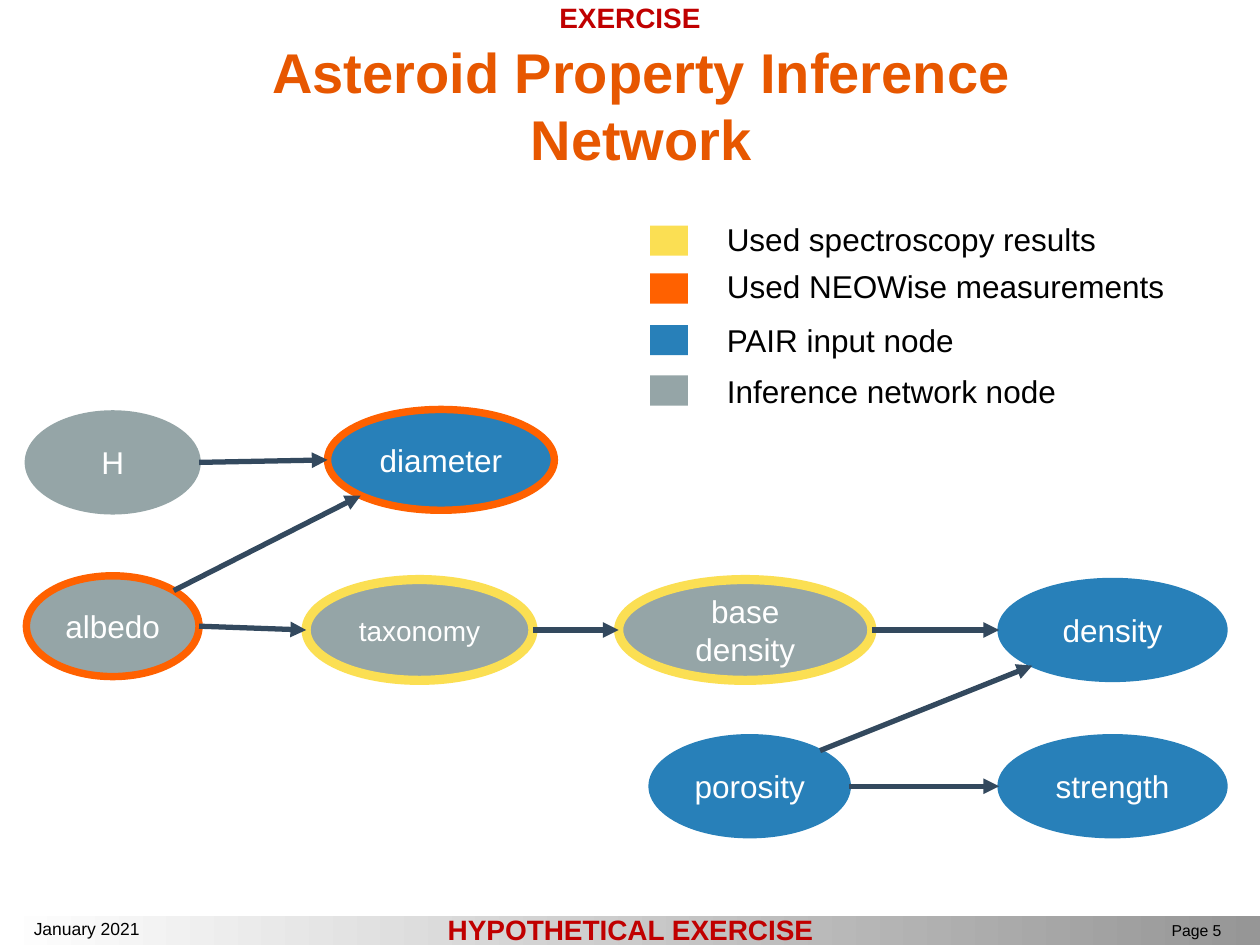
import math

import pptx
import pptx.util
from lxml import etree
from pptx.dml.color import RGBColor
from pptx.enum.shapes import MSO_CONNECTOR, MSO_SHAPE
from pptx.enum.text import MSO_ANCHOR, PP_ALIGN
from pptx.oxml.ns import qn
from pptx.util import Inches, Pt

WHITE = RGBColor(0xFF, 0xFF, 0xFF)
BLACK = RGBColor(0x00, 0x00, 0x00)
SILVER = RGBColor(0x96, 0x96, 0x96)
RED = RGBColor(0xC0, 0x00, 0x00)
TITLE = RGBColor(0xE7, 0x57, 0x00)
YELLOW = RGBColor(0xFB, 0xDF, 0x53)
ORANGE = RGBColor(0xFF, 0x61, 0x00)
BLUE = RGBColor(0x28, 0x80, 0xB9)
GRAY = RGBColor(0x95, 0xA5, 0xA7)
NAVY = RGBColor(0x33, 0x49, 0x5E)

prs = pptx.Presentation()
prs.slide_width, prs.slide_height = Inches(10), Inches(7.5)
s = prs.slides.add_slide(prs.slide_layouts[6])


def write(sp, text, size, color, bold=False, align=PP_ALIGN.LEFT,
          anchor=MSO_ANCHOR.TOP, wrap=True):
    tf = sp.text_frame
    tf.word_wrap = wrap
    tf.vertical_anchor = anchor
    p = tf.paragraphs[0]
    p.text = text
    p.alignment = align
    p.font.name = "Arial"
    p.font.size = Pt(size)
    p.font.bold = bold
    p.font.color.rgb = color
    return tf


def add_box(x, y, w, h, *args, **kwargs):
    sp = s.shapes.add_textbox(Inches(x), Inches(y), Inches(w), Inches(h))
    return write(sp, *args, **kwargs)


# Footer band
sp = s.shapes.add_shape(MSO_SHAPE.RECTANGLE, 0, Inches(7.27), Inches(10), Inches(0.23))
sp.shadow.inherit = False
sp.line.fill.background()
sp.fill.gradient()
sp.fill.gradient_angle = 0
for stop, color, position in zip(sp.fill.gradient_stops, (WHITE, SILVER), (0, 1)):
    stop.color.rgb = color
    stop.position = position

# Page number, exercise banners, date and title
add_box(9.2, 7.26, 0.69, 0.25, "Page 5", 9, BLACK, wrap=False)
add_box(0.17, 7.24, 2.06, 0.26, "January 2021", 10, BLACK)
for x, y, w, text in [(4.29, 0.01, 1.42, "EXERCISE"),
                      (2.17, 7.25, 5.67, "HYPOTHETICAL EXERCISE")]:
    add_box(x, y, w, 0.25, text, 16, RED, True, PP_ALIGN.CENTER, MSO_ANCHOR.MIDDLE)
tf = add_box(1.15, 0.25, 7.88, 0.83, "Asteroid Property Inference Network", 32,
             TITLE, True, PP_ALIGN.CENTER)
tf.margin_left = tf.margin_right = Inches(0.2)

# Network nodes: left, top, width, fill, outline, outline width, text size
NODE_H = 0.8
nodes = {
    "H": (0.21, 3.27, 1.37, GRAY, GRAY, 2, 18),
    "albedo": (0.21, 4.57, 1.37, GRAY, ORANGE, 4.25, 18),
    "porosity": (5.16, 5.84, 1.58, BLUE, BLUE, 2, 18),
    "diameter": (2.6, 3.25, 1.8, BLUE, ORANGE, 4.25, 18),
    "taxonomy": (2.43, 4.6, 1.8, GRAY, YELLOW, 5.25, 16),
    "base density": (4.91, 4.6, 2.01, GRAY, YELLOW, 5.25, 18),
    "density": (7.93, 4.6, 1.8, BLUE, BLUE, 2, 18),
    "strength": (7.93, 5.84, 1.8, BLUE, BLUE, 2, 18),
}
for name, (x, y, w, fill, line, line_w, size) in nodes.items():
    sp = s.shapes.add_shape(MSO_SHAPE.OVAL, Inches(x), Inches(y), Inches(w), Inches(NODE_H))
    sp.shadow.inherit = False
    sp.fill.solid()
    sp.fill.fore_color.rgb = fill
    sp.line.color.rgb = line
    sp.line.width = Pt(line_w)
    tf = write(sp, name, size, WHITE, align=PP_ALIGN.CENTER, anchor=MSO_ANCHOR.MIDDLE)
    tf.margin_left = tf.margin_right = Inches(0.08)

# Arrows leave and enter each ellipse at an angle from its centre (0 = right)
edges = [
    ("H", 0, "diameter", 180),
    ("albedo", 45, "diameter", 225),
    ("albedo", 0, "taxonomy", 180),
    ("taxonomy", 0, "base density", 180),
    ("base density", 0, "density", 180),
    ("porosity", 45, "density", 225),
    ("porosity", 0, "strength", 180),
]
for start, start_angle, end, end_angle in edges:
    points = []
    for name, angle in ((start, start_angle), (end, end_angle)):
        x, y, w = nodes[name][:3]
        a = math.radians(angle)
        points += [Inches(x + w / 2 * (1 + math.cos(a))),
                   Inches(y + NODE_H / 2 * (1 - math.sin(a)))]
    c = s.shapes.add_connector(MSO_CONNECTOR.STRAIGHT, *points)
    c.line.color.rgb = NAVY
    c.line.width = Pt(3)
    etree.SubElement(c.line._get_or_add_ln(), qn("a:tailEnd"), type="triangle")
    etree.SubElement(c._element.spPr, qn("a:effectLst"))

# Legend: swatch top, label top, label width
legend = [
    (1.79, 1.7, 3.16, YELLOW, "Used spectroscopy results"),
    (2.17, 2.07, 3.71, ORANGE, "Used NEOWise measurements"),
    (2.58, 2.5, 2.02, BLUE, "PAIR input node"),
    (2.98, 2.9, 2.84, GRAY, "Inference network node"),
]
for swatch_y, label_y, label_w, color, text in legend:
    sp = s.shapes.add_shape(MSO_SHAPE.RECTANGLE, Inches(5.16), Inches(swatch_y),
                            Inches(0.3), Inches(0.24))
    sp.shadow.inherit = False
    sp.fill.solid()
    sp.fill.fore_color.rgb = color
    sp.line.fill.background()
    add_box(5.67, label_y, label_w, 0.4, text, 18, BLACK, wrap=False)

prs.save("out.pptx")
